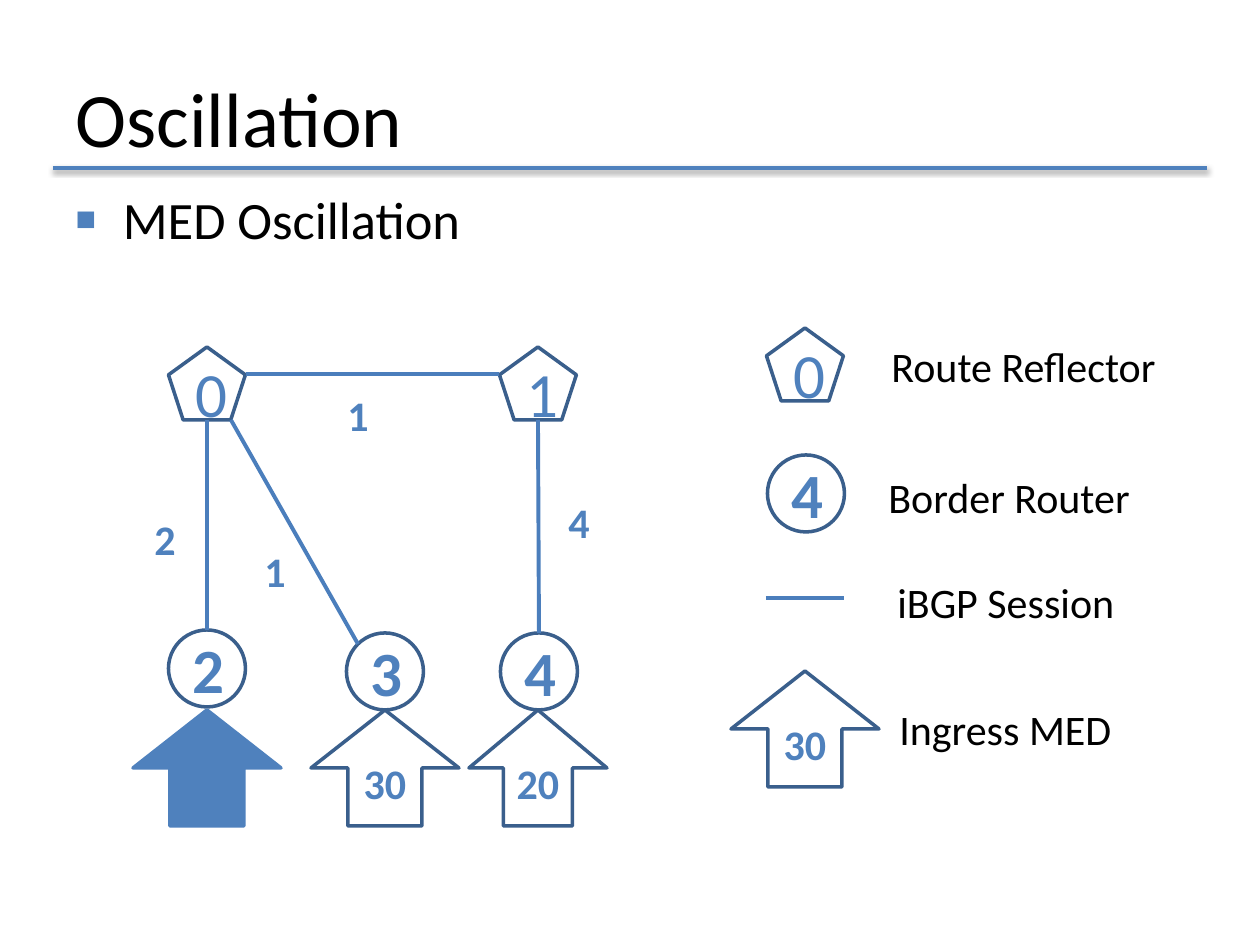
from lxml import etree
from pptx import Presentation
from pptx.dml.color import RGBColor
from pptx.enum.shapes import MSO_CONNECTOR, MSO_SHAPE
from pptx.enum.text import MSO_ANCHOR, MSO_AUTO_SIZE, PP_ALIGN
from pptx.oxml import parse_xml
from pptx.oxml.ns import nsdecls, qn
from pptx.util import Pt

PENTAGON, CIRCLE, ARROW = MSO_SHAPE.REGULAR_PENTAGON, MSO_SHAPE.OVAL, MSO_SHAPE.UP_ARROW
STRAIGHT = MSO_CONNECTOR.STRAIGHT
LEFT, CENTER = PP_ALIGN.LEFT, PP_ALIGN.CENTER
MIDDLE, TOP = MSO_ANCHOR.MIDDLE, MSO_ANCHOR.TOP
FIXED = MSO_AUTO_SIZE.NONE
PX = 914400 / 126

THEME = {
    "font": "Calibri",
    "ink": "000000", "accent": "4F81BD", "edge": "3A5F8C", "link": "4B7EBC", "paper": "FFFFFF",
    "title": 44, "body": 30, "node": 36, "label": 24,
    "outline": 2, "session": 2.25,
}


def write(s, text, size, color, bold=False, align=LEFT, anchor=TOP):
    tf = s.text_frame
    for name, value in {"auto_size": FIXED, "word_wrap": True, "vertical_anchor": anchor}.items():
        setattr(tf, name, value)
    p = tf.paragraphs[0]
    p.alignment = align
    r = p.add_run()
    r.text = text
    for name, value in {"name": THEME["font"], "size": Pt(THEME[size]), "bold": bold}.items():
        setattr(r.font, name, value)
    r.font.color.rgb = RGBColor.from_string(THEME[color])
    return p


def connect(x1, y1, x2, y2, color, width):
    cn = sp.add_connector(STRAIGHT, *(round(v * PX) for v in (x1, y1, x2, y2)))
    cn.line.color.rgb = RGBColor.from_string(THEME[color])
    cn.line.width = Pt(THEME[width])
    etree.SubElement(cn._element.spPr, qn("a:effectLst"))
    return cn


prs = Presentation()
prs.slide_width, prs.slide_height = round(1260 * PX), round(945 * PX)
slide = prs.slides.add_slide(prs.slide_layouts[1])
sp = slide.shapes

title, body = sp.title, slide.placeholders[1]
for s, box in ((title, (63, 38, 1134, 157)), (body, (63, 181, 451, 102))):
    for name, value in zip(("left", "top", "width", "height"), box):
        setattr(s, name, round(value * PX))
write(title, "Oscillation", "title", "ink", anchor=MIDDLE)

rule = connect(53, 168, 1207, 168, "accent", "outline")
rule._element.spPr.find(qn("a:effectLst")).append(parse_xml(
    f'<a:outerShdw {nsdecls("a")} blurRad="40000" dist="20000" dir="5400000" rotWithShape="0">'
    '<a:srgbClr val="000000"><a:alpha val="38000"/></a:srgbClr></a:outerShdw>'))

p = write(body, "MED Oscillation", "body", "ink")
pPr = p._p.get_or_add_pPr()
for name, value in {"marL": "342900", "indent": "-342900"}.items():
    pPr.set(name, value)
color = etree.SubElement(pPr, qn("a:buClr"))
etree.SubElement(color, qn("a:srgbClr"), val=THEME["accent"])
etree.SubElement(pPr, qn("a:buSzPct"), val="65000")
etree.SubElement(pPr, qn("a:buFont"), typeface="Arial")
etree.SubElement(pPr, qn("a:buChar"), char="■")

STYLES = {
    PENTAGON: {"size": "node", "bold": False, "box": (77, 73)},
    CIRCLE: {"size": "node", "bold": True, "box": (77, 77)},
    ARROW: {"size": "label", "bold": True, "box": (148, 116)},
}
nodes = [
    ("reflector 0", PENTAGON, 207, 347, "0"),
    ("router 2", CIRCLE, 207, 630, "2"),
    ("router 3", CIRCLE, 385, 633, "3"),
    ("router 4", CIRCLE, 539, 633, "4"),
    ("reflector 1", PENTAGON, 538, 347, "1"),
    ("med 3", ARROW, 385, 710, "30"),
    ("med 4", ARROW, 538, 710, "20"),
    ("med 2", ARROW, 207, 710, ""),
    ("key reflector", PENTAGON, 805, 328, "0"),
    ("key router", CIRCLE, 806, 455, "4"),
    ("key med", ARROW, 805, 671, "30"),
]
placed = {}
for key, kind, cx, top, text in nodes:
    style = STYLES[kind]
    w, h = style["box"]
    if key == "med 4":
        w = 138
    s = sp.add_shape(kind, *(round(v * PX) for v in (cx - w / 2, top, w, h)))
    s.shadow.inherit = False
    s.fill.solid()
    s.fill.fore_color.rgb = RGBColor.from_string(THEME["paper" if text else "accent"])
    s.line.color.rgb = RGBColor.from_string(THEME["edge" if text else "accent"])
    s.line.width = Pt(THEME["outline"])
    if text:
        write(s, text, style["size"], "accent", style["bold"], CENTER, MIDDLE)
    placed[key] = s

sessions = [
    (246, 374, 499, 374, None),
    (207, 420, 207, 630, "router 2"),
    (231, 420, 358, 644, None),
    (538, 420, 539, 633, "router 4"),
    (766, 598, 844, 598, None),
]
for x1, y1, x2, y2, router in sessions:
    cn = connect(x1, y1, x2, y2, "link", "session")
    if router:
        cn.end_connect(placed[router], 0)

labels = [
    (879, 334, 325, "Route Reflector", "ink"),
    (876, 465, 325, "Border Router", "ink"),
    (885, 570, 325, "iBGP Session", "ink"),
    (887, 697, 325, "Ingress MED", "ink"),
    (335, 383, 74, "1", "accent"),
    (556, 490, 74, "4", "accent"),
    (142, 507, 74, "2", "accent"),
    (252, 539, 74, "1", "accent"),
]
for left, top, width, text, color in labels:
    s = sp.add_textbox(*(round(v * PX) for v in (left, top, width, 63)))
    write(s, text, "label", color, bold=color == "accent")

prs.save("out.pptx")
